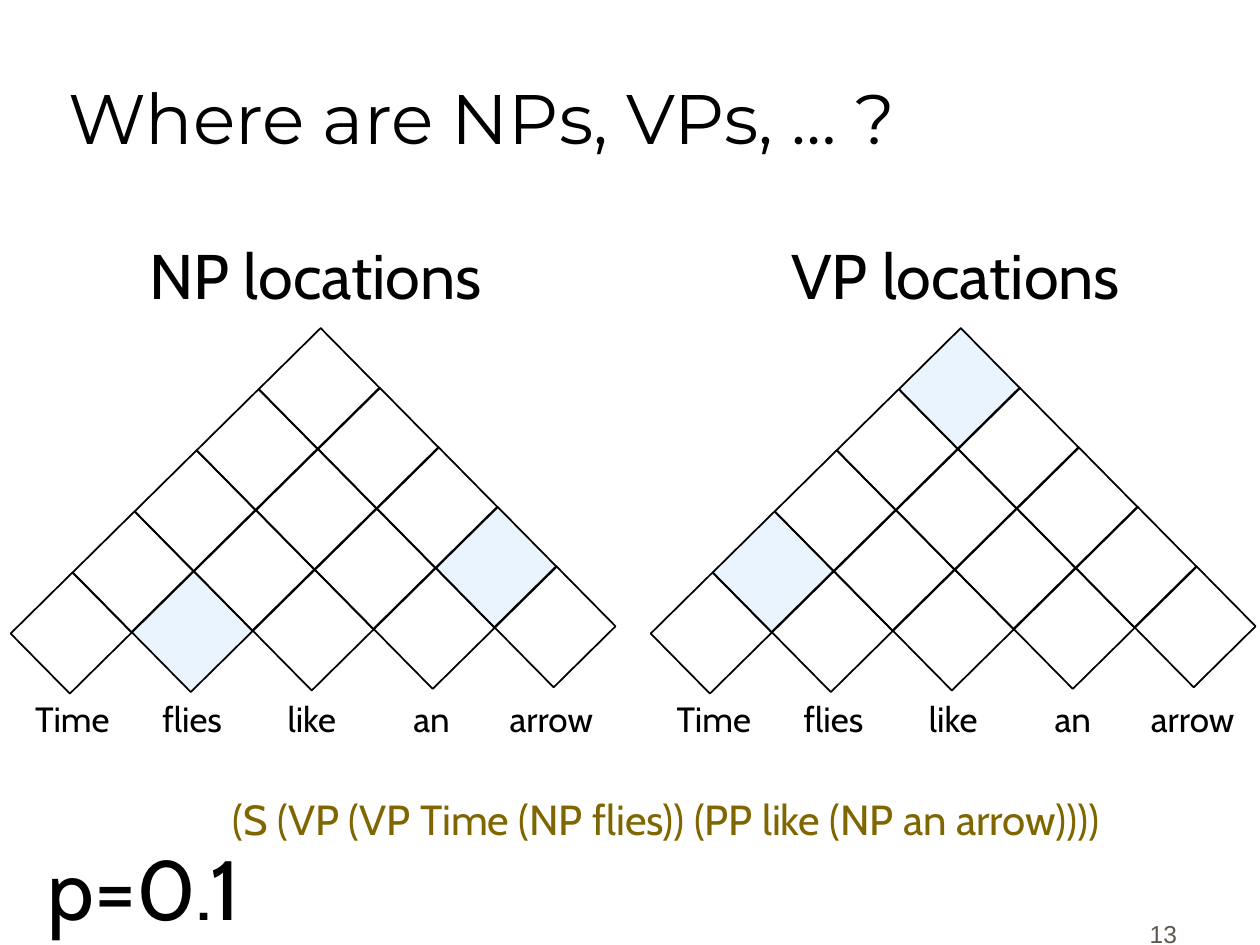
from lxml import etree
from pptx import Presentation
from pptx.dml.color import RGBColor
from pptx.enum import shapes, text
from pptx.oxml.ns import qn
from pptx.util import Inches, Pt

WORDS = ["Time", "flies", "like", "an", "arrow"]
STEPS = len(WORDS) - 1
BLACK = "000000"
CENTER = text.PP_ALIGN.CENTER


def color(value):
    return RGBColor.from_string(value)


def write(tf, content, size, font="Cabin", hue=BLACK, align=text.PP_ALIGN.LEFT):
    tf.word_wrap = True
    p = tf.paragraphs[0]
    p.alignment = align
    r = p.add_run()
    r.text = content
    r.font.name = font
    r.font.size = Pt(size)
    r.font.color.rgb = color(hue)


def add_text(parent, box, content, size, **style):
    sp = parent.add_textbox(*map(Inches, box))
    write(sp.text_frame, content, size, **style)
    return sp


def add_title(s, content):
    sp = s.shapes.title
    sp.left, sp.top, sp.width, sp.height = map(Inches, (0.44, 0.06, 8.5, 1.25))
    tf = sp.text_frame
    tf.auto_size = text.MSO_AUTO_SIZE.NONE
    tf.vertical_anchor = text.MSO_ANCHOR.BOTTOM
    write(tf, content, 40, font="Montserrat")


def add_cell(parent, left, top, marked):
    sp = parent.add_shape(shapes.MSO_SHAPE.RECTANGLE,
                          *map(Inches, (left, top, 0.67, 0.69)))
    sp.rotation = 45.4
    sp.shadow.inherit = False
    sp.line.color.rgb = color(BLACK)
    sp.line.width = Pt(1)
    if marked:
        sp.fill.solid()
        sp.fill.fore_color.rgb = color("3399FF")
        srgb = sp.fill._xPr.find(".//" + qn("a:srgbClr"))
        etree.SubElement(srgb, qn("a:alpha")).set("val", "10000")
    else:
        sp.fill.background()


def add_chart_pyramid(s, apex, marked):
    """Draw the cells; a cell is (steps down-left, steps down-right)."""
    group = s.shapes.add_group_shape().shapes
    for i in range(STEPS + 1):
        for j in range(STEPS + 1 - i):
            add_cell(group,
                     apex + (1.87 * j - 1.97 * i) / STEPS,
                     2.74 + (1.89 * j + 1.94 * i) / STEPS,
                     (i, j) in marked)


def add_words(s, left):
    group = s.shapes.add_group_shape().shapes
    for n, word in enumerate(WORDS):
        add_text(group, (left + 0.95 * n, 5.49, 0.95, 0.44), word, 20, align=CENTER)


def main():
    prs = Presentation()
    prs.slide_width, prs.slide_height = Inches(10), Inches(7.5)
    s = prs.slides.add_slide(prs.slide_layouts[5])
    add_title(s, "Where are NPs, VPs, … ?")

    number = add_text(s.shapes, (7.36, 7.08, 2.08, 0.5), "13", 14, font="Arial",
                      hue="5E574E", align=text.PP_ALIGN.RIGHT)
    number.text_frame.vertical_anchor = text.MSO_ANCHOR.BOTTOM

    panels = [
        ("NP locations", 1.04, 2.93, 2.2, 0.1, {(0, 3), (3, 1)}),
        ("VP locations", 6.14, 2.89, 7.28, 5.19, {(0, 0), (3, 0)}),
    ]
    for heading, left, width, apex, words_left, marked in panels:
        add_chart_pyramid(s, apex, marked)
        add_words(s, words_left)
        add_text(s.shapes, (left, 1.83, width, 0.71), heading, 36, align=CENTER)

    add_text(s.shapes, (0.28, 6.59, 2, 0.91), "p=0.1", 48)
    add_text(s.shapes, (1.75, 6.25, 8.13, 0.5),
             "(S (VP (VP Time (NP flies)) (PP like (NP an arrow))))", 24, hue="806600")
    prs.save("out.pptx")


if __name__ == "__main__":
    main()
